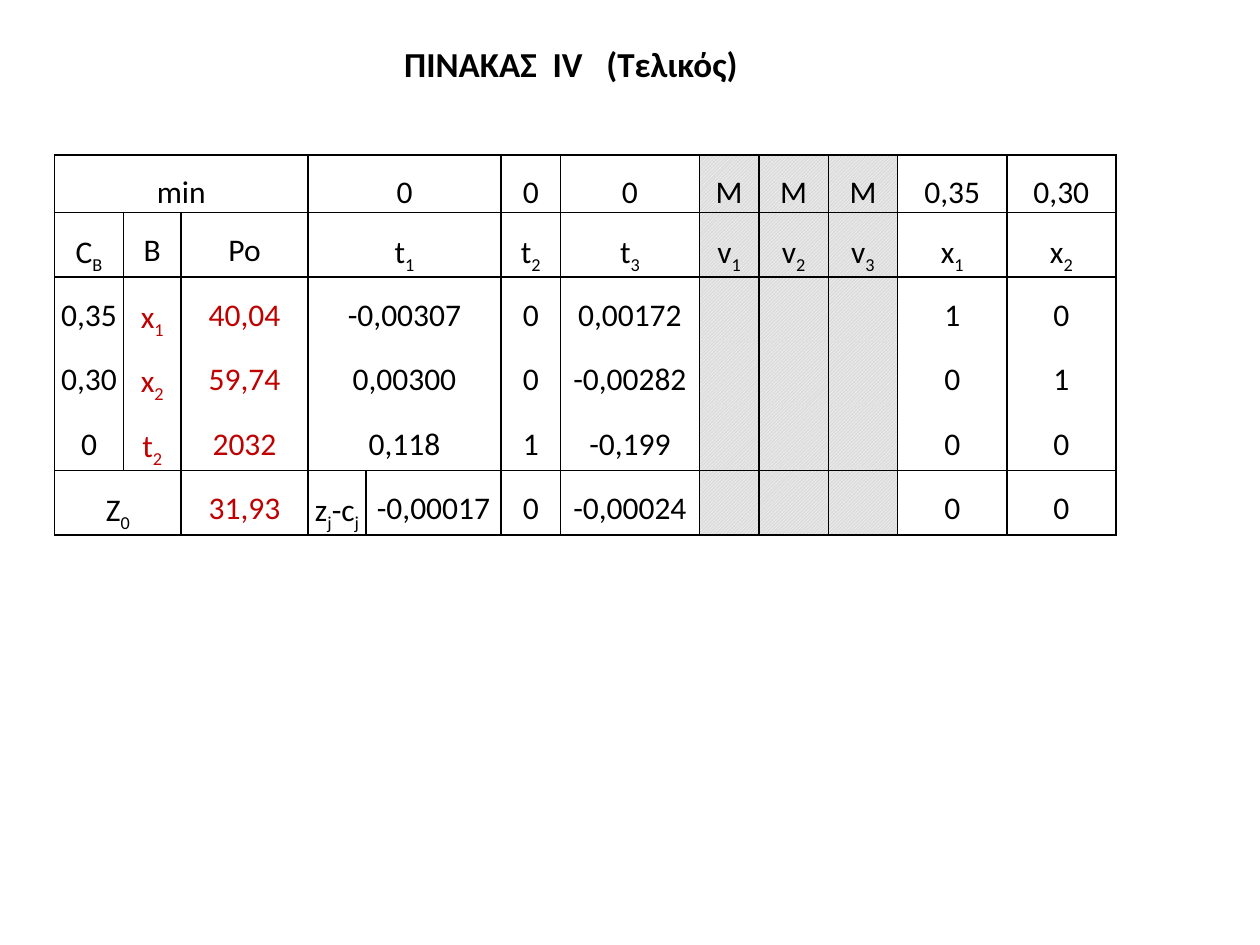
"""Build the slide with the final simplex table."""
from lxml import etree
from pptx import Presentation
from pptx import util as u
from pptx.dml import color
from pptx.enum import dml, text
from pptx.oxml import ns

BLACK, RED, WHITE, GREY = "000000", "C00000", "FFFFFF", "DDDDDD"
TITLE = "ΠΙΝΑΚΑΣ  IV   (Τελικός)"
WIDTHS = (1.39, 1.16, 2.56, 1.17, 2.72, 1.2, 2.8, 1.2, 1.4, 1.4, 2.2, 2.2)
MARGIN_WIDTHS = (0.28, 0.2, 0.2, 0.2, 0.2, 0.69)
HEIGHTS = (1.13, 1.3, 1.3, 1.3, 1.3, 1.3)
ROWS = (
    ("min", "", "", "0", "", "0", "0", "M", "M", "M", "0,35", "0,30"),
    ("C_B", "B", "Po", "t_1", "", "t_2", "t_3", "v_1", "v_2", "v_3", "x_1", "x_2"),
    ("0,35", "x_1", "40,04", "-0,00307", "", "0", "0,00172", "", "", "", "1", "0"),
    ("0,30", "x_2", "59,74", "0,00300", "", "0", "-0,00282", "", "", "", "0", "1"),
    ("0", "t_2", "2032", "0,118", "", "1", "-0,199", "", "", "", "0", "0"),
    ("Z_0", "", "31,93", "z_j-c_j ", "-0,00017", "0", "-0,00024", "", "", "", "0", "0"),
)
BODY_SPANS = ((3, 4), (13, 15), (16, 17))
SPANS = (
    ((0, 2), (3, 4), (12, 14), (15, 16)),
    ((3, 4), (12, 13), (14, 17)),
    BODY_SPANS, BODY_SPANS, BODY_SPANS,
    ((0, 1), (12, 14), (15, 16)),
)
RED_CELLS = {(row, column) for row in (2, 3, 4) for column in (1, 2)} | {(5, 2)}
HATCHED_COLUMNS = (7, 8, 9)
OPEN_SIDES = {2: "B", 3: "TB", 4: "T"}


def rgb(value):
    """Turn a hex string into a colour."""
    return color.RGBColor.from_string(value)


def write(para, content, size=18, colour=BLACK, bold=False):
    """Write text, lowering each letter that follows an underscore."""
    first, *others = content.split("_")
    pieces = [(first, False)]
    for other in others:
        pieces += [(other[0], True), (other[1:], False)]
    for piece, lowered in pieces:
        if piece:
            span = para.add_run()
            span.text = piece
            span.font.name, span.font.size, span.font.bold = "Calibri", u.Pt(size), bold
            span.font.color.rgb = rgb(colour)
            if lowered:
                span.font._element.set("baseline", "-25000")


def find_open_sides(row, column):
    """Name the sides of a cell that carry no line."""
    if column < len(WIDTHS):
        return OPEN_SIDES.get(row, "")
    return "RTB" if column == len(WIDTHS) else "LRTB"


def draw_borders(cell, open_sides):
    """Draw thin black lines on every side that is not open."""
    properties = cell._tc.get_or_add_tcPr()
    for side in "LRTB":
        line = etree.SubElement(properties, ns.qn(f"a:ln{side}"), w=str(u.Pt(1)))
        if side in open_sides:
            etree.SubElement(line, ns.qn("a:noFill"))
        else:
            fill = etree.SubElement(line, ns.qn("a:solidFill"))
            etree.SubElement(fill, ns.qn("a:srgbClr"), val=BLACK)


def fill_cell(cell, hatched):
    """Hatch the cell or leave it clear."""
    if not hatched:
        cell.fill.background()
        return
    cell.fill.patterned()
    cell.fill.pattern = dml.MSO_PATTERN.LIGHT_UPWARD_DIAGONAL
    cell.fill.fore_color.rgb = rgb(WHITE)
    cell.fill.back_color.rgb = rgb(GREY)


def add_title(page):
    """Add the heading above the table."""
    box = page.shapes.add_textbox(u.Cm(7.9), u.Cm(0.74), u.Cm(7.29), u.Cm(1.1))
    box.text_frame.word_wrap = False
    write(box.text_frame.paragraphs[0], TITLE, size=20, bold=True)


def add_tableau(page):
    """Add the simplex table with its clear right margin."""
    widths = WIDTHS + MARGIN_WIDTHS
    frame = page.shapes.add_table(len(ROWS), len(widths), u.Cm(1.1), u.Cm(3.12),
                                  u.Cm(sum(widths)), u.Cm(sum(HEIGHTS)))
    table = frame.table
    table.first_row = table.horz_banding = False
    for column, width in zip(table.columns, widths):
        column.width = u.Cm(width)
    for row, height in zip(table.rows, HEIGHTS):
        row.height = u.Cm(height)
    for row, spans in enumerate(SPANS):
        for first, last in spans:
            table.cell(row, first).merge(table.cell(row, last))
    for row, contents in enumerate(ROWS):
        for column, content in enumerate(contents + ("",) * len(MARGIN_WIDTHS)):
            cell = table.cell(row, column)
            cell.margin_left = cell.margin_right = u.Cm(0.08)
            cell.margin_top = cell.margin_bottom = 0
            draw_borders(cell, find_open_sides(row, column))
            fill_cell(cell, column in HATCHED_COLUMNS)
            para = cell.text_frame.paragraphs[0]
            para.alignment, para.line_spacing = text.PP_ALIGN.CENTER, 1.5
            write(para, content, colour=RED if (row, column) in RED_CELLS else BLACK)


def main():
    """Build and save the deck."""
    deck = Presentation()
    deck.slide_width, deck.slide_height = u.Cm(25.4), u.Cm(19.05)
    page = deck.slides.add_slide(deck.slide_layouts[6])
    add_tableau(page)
    add_title(page)
    deck.save("out.pptx")


if __name__ == "__main__":
    main()
